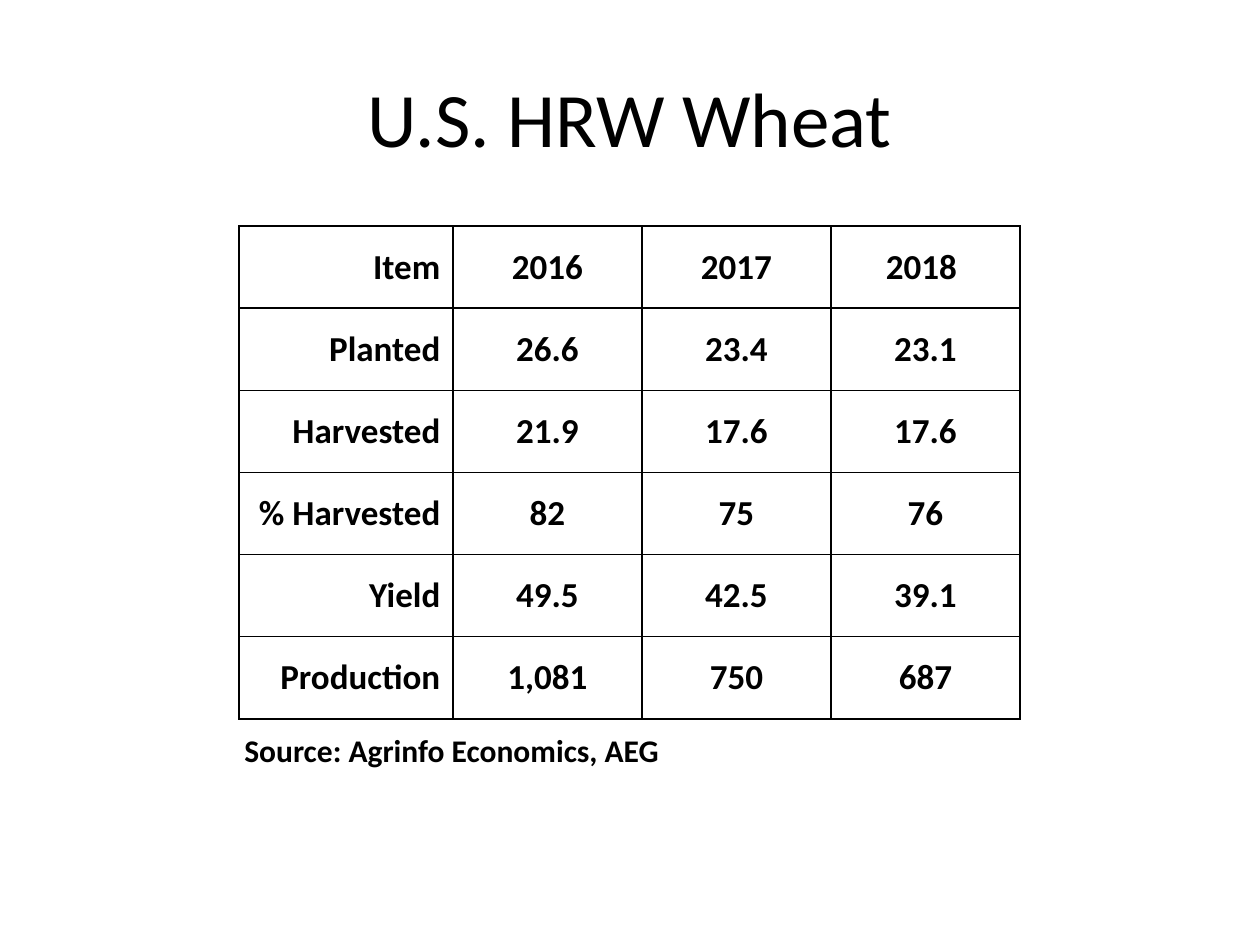
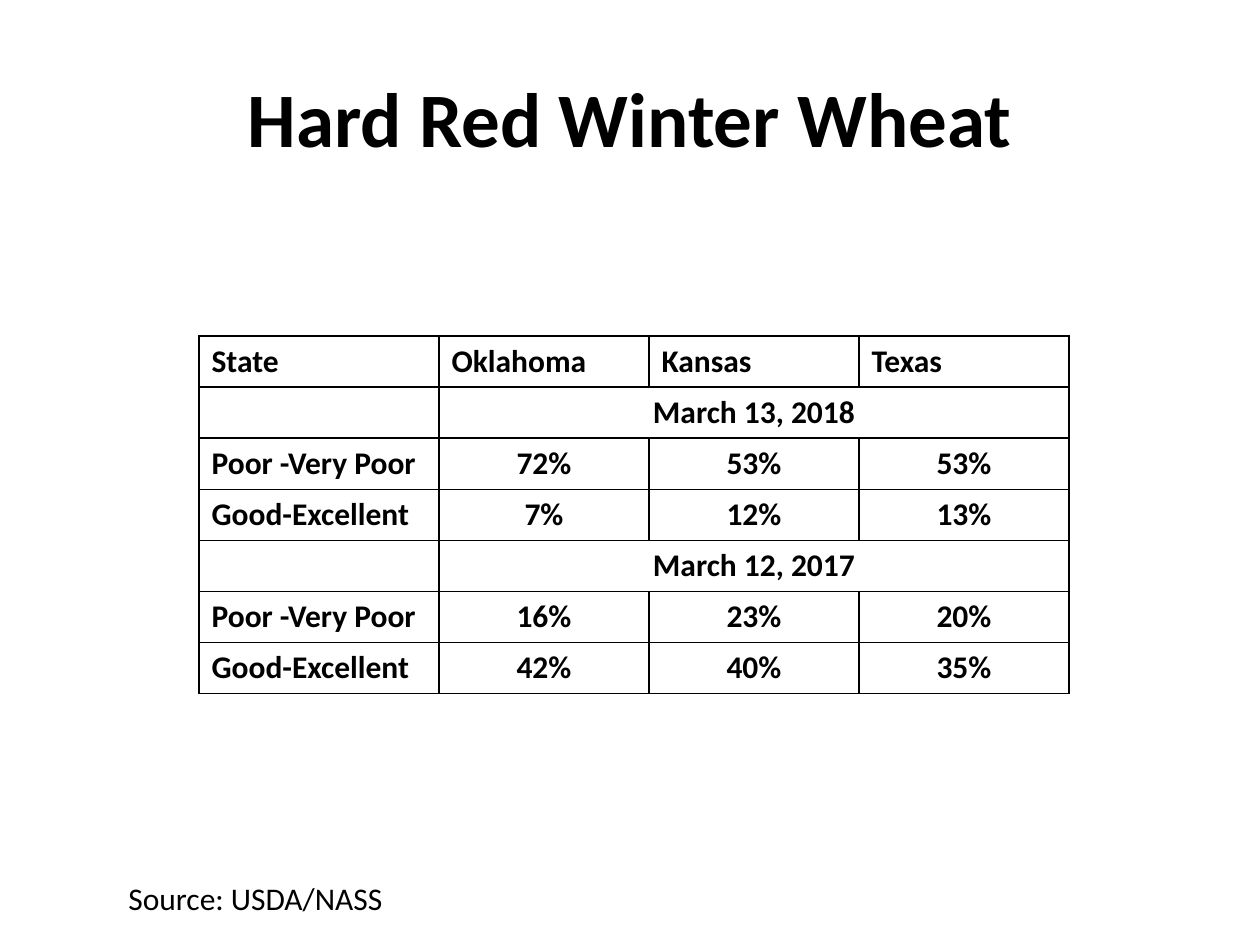
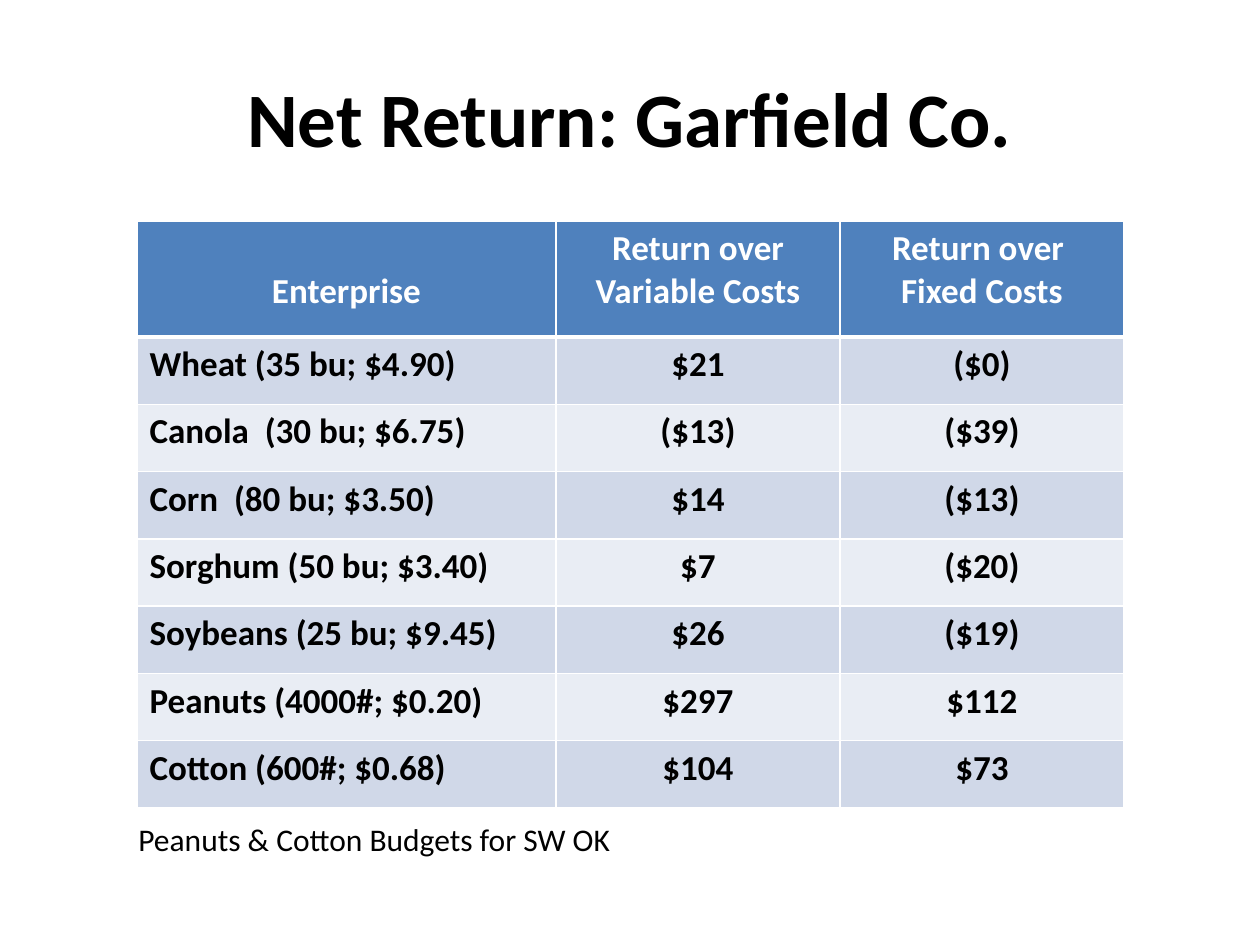
from lxml.etree import SubElement
from pptx import Presentation
from pptx.dml.color import RGBColor
from pptx.enum.text import MSO_ANCHOR as Anchor, PP_ALIGN as Align
from pptx.oxml.ns import qn
from pptx.util import Emu, Pt

EMU_PER_PX = 914400 / 126
BLACK, WHITE = "000000", "FFFFFF"
HEADER, BANDS = "4F81BD", ("D0D8E8", "E9EDF4")
TITLE_ONLY = 5


def px(length):
    return Emu(round(length * EMU_PER_PX))


def colour(value):
    return RGBColor.from_string(value)


def assign(target, values):
    for name, value in values.items():
        setattr(target, name, value)


class SlideMaker:
    font = "Calibri"

    def __init__(self):
        self.deck = Presentation()
        assign(self.deck, {"slide_width": px(1260), "slide_height": px(945)})
        self.page = None

    def put_text(self, frame, text, size, bold=False, ink=BLACK, align=Align.LEFT):
        para = frame.paragraphs[0]
        assign(para, {"text": text, "alignment": align})
        for span in para.runs:
            assign(span.font, {"name": self.font, "size": Pt(size), "bold": bold})
            span.font.color.rgb = colour(ink)

    def start(self, title, bold=True):
        self.page = self.deck.slides.add_slide(self.deck.slide_layouts[TITLE_ONLY])
        box = self.page.shapes.title
        assign(box, {"left": px(63), "top": px(38), "width": px(1134), "height": px(157)})
        box.text_frame.vertical_anchor = Anchor.MIDDLE
        self.put_text(box.text_frame, title, 44, bold, align=Align.CENTER)

    def note(self, text, left, top, width, bold=False):
        box = self.page.shapes.add_textbox(px(left), px(top), px(width), px(50))
        box.text_frame.word_wrap = True
        self.put_text(box.text_frame, text, 18, bold)

    def border(self, cell, ink, **widths):
        properties = cell._tc.get_or_add_tcPr()
        for side in "LRTB":
            line = SubElement(properties, qn(f"a:ln{side}"), w=str(Pt(widths.get(side, 1))))
            fill = SubElement(line, qn("a:solidFill"))
            SubElement(fill, qn("a:srgbClr"), val=ink)

    def table(self, rows, left, top, widths, height, header_height=None):
        frame = self.page.shapes.add_table(
            len(rows), len(widths), px(left), px(top), px(sum(widths)), px(height))
        grid = frame.table
        assign(grid, {"first_row": False, "horz_banding": False})
        for column, width in zip(grid.columns, widths):
            column.width = px(width)
        header_height = header_height or height / len(rows)
        body_height = (height - header_height) / (len(rows) - 1)
        for index, row in enumerate(grid.rows):
            row.height = px(body_height if index else header_height)
        return grid

    def plain_table(self, rows, left, top, widths, height, size, anchor, align_of):
        grid = self.table(rows, left, top, widths, height)
        for r, values in enumerate(rows):
            for c, value in enumerate(values):
                cell = grid.cell(r, c)
                self.border(cell, BLACK)
                cell.fill.background()
                cell.vertical_anchor = anchor
                self.put_text(cell.text_frame, value, size, True, align=align_of(r, c))
        return grid

    def banded_table(self, rows, left, top, widths, height, header_height):
        grid = self.table(rows, left, top, widths, height, header_height)
        for r, values in enumerate(rows):
            for c, value in enumerate(values):
                cell = grid.cell(r, c)
                self.border(cell, WHITE, T=3 if r == 1 else 1, B=1 if r else 3)
                cell.fill.solid()
                cell.fill.fore_color.rgb = colour(BANDS[(r - 1) % 2] if r else HEADER)
                if r == 0:
                    assign(cell, {"vertical_anchor": Anchor.BOTTOM, "margin_bottom": px(24)})
                align = Align.LEFT if r and c == 0 else Align.CENTER
                self.put_text(cell.text_frame, value, 20, True, BLACK if r else WHITE, align)


def wheat_supply(maker):
    maker.start("U.S. HRW Wheat", bold=False)
    rows = [
        ("Item", "2016", "2017", "2018 "),
        ("Planted", "26.6", "23.4", "23.1"),
        ("Harvested", "21.9", "17.6", "17.6"),
        ("% Harvested", "82", "75", "76"),
        ("Yield", "49.5", "42.5", "39.1"),
        ("Production", "1,081", "750", "687"),
    ]
    maker.plain_table(rows, 239, 226, (214, 189, 189, 189), 493, 20, Anchor.MIDDLE,
                      lambda r, c: Align.CENTER if c else Align.RIGHT)
    maker.note("Source: Agrinfo Economics, AEG", 232, 725, 440, bold=True)


def wheat_condition(maker):
    maker.start("Hard Red Winter Wheat")
    maker.note("Source: USDA/NASS", 116, 873, 282)
    rows = [
        ("State", "Oklahoma", "Kansas", "Texas"),
        ("", "March 13, 2018", "", ""),
        ("Poor -Very Poor", "72%", "53%", "53%"),
        ("Good-Excellent", "7%", "12%", "13%"),
        ("", "March 12, 2017", "", ""),
        ("Poor -Very Poor", "16%", "23%", "20%"),
        ("Good-Excellent", "42%", "40%", "35%"),
    ]
    grid = maker.plain_table(rows, 199, 336, (240, 210, 210, 210), 358, 18, Anchor.TOP,
                             lambda r, c: Align.CENTER if r and c else Align.LEFT)
    for date_row in (1, 4):
        grid.cell(date_row, 1).merge(grid.cell(date_row, 3))


def net_return(maker):
    maker.start("Net Return: Garfield Co.")
    rows = [
        ("Enterprise", "Return over Variable Costs", "Return over \vFixed Costs"),
        ("Wheat (35 bu; $4.90)", "$21", "($0)"),
        ("Canola  (30 bu; $6.75)", "($13)", "($39)"),
        ("Corn  (80 bu; $3.50)", "$14", "($13)"),
        ("Sorghum (50 bu; $3.40)", "$7", "($20)"),
        ("Soybeans (25 bu; $9.45)", "$26", "($19)"),
        ("Peanuts (4000#; $0.20)", "$297", "$112"),
        ("Cotton (600#; $0.68)", "$104", "$73"),
    ]
    maker.banded_table(rows, 137, 221, (419, 284, 284), 587, 116)
    maker.note("Peanuts & Cotton Budgets for SW OK", 126, 814, 503)


def main():
    maker = SlideMaker()
    for build in (wheat_supply, wheat_condition, net_return):
        build(maker)
    maker.deck.save("out.pptx")


if __name__ == "__main__":
    main()
